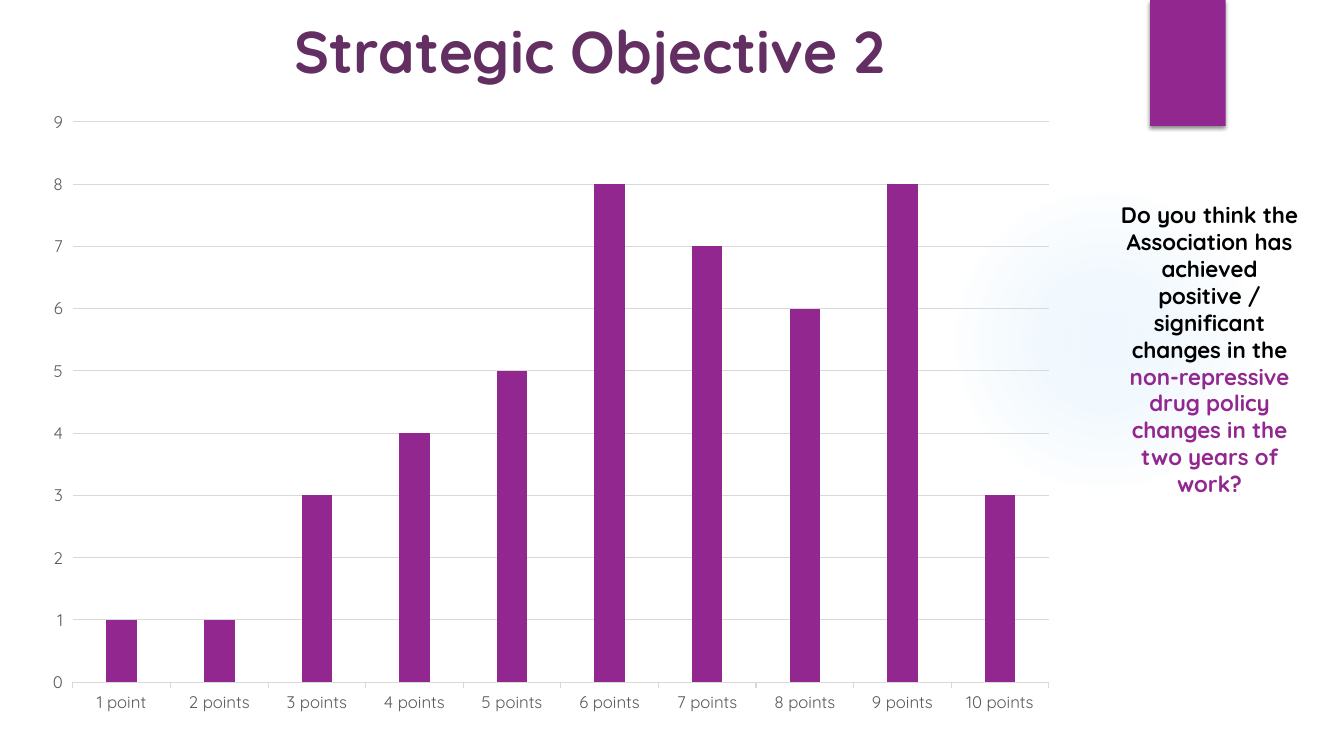
from lxml import etree
from pptx import Presentation
from pptx.chart.data import CategoryChartData as ChartData
from pptx.dml.color import RGBColor
from pptx.enum.chart import XL_CHART_TYPE as Kind, XL_TICK_MARK as Tick
from pptx.enum.shapes import MSO_SHAPE as Shape
from pptx.enum.text import MSO_ANCHOR as Anchor, MSO_AUTO_SIZE as Fit, PP_ALIGN as Align
from pptx.oxml import parse_xml
from pptx.util import Pt

FACE = "Quicksand"
PURPLE, PLUM, GREY, PALE = "92278F", "632E62", "595959", "D9D9D9"
NS = 'xmlns:a="http://schemas.openxmlformats.org/drawingml/2006/main"'


def paint(target, color):
    if hasattr(target, "solid"):
        target.solid()
        target = target.fore_color
    target.rgb = RGBColor.from_string(color)


def style(font, size, color, bold=False):
    font.name, font.size, font.bold = FACE, Pt(size), bold
    paint(font.color, color)


deck = Presentation()
deck.slide_width, deck.slide_height = Pt(960), Pt(540)
slide = deck.slides.add_slide(deck.slide_layouts[5])
shapes = slide.shapes

# Soft blue glow
glow = shapes.add_shape(Shape.OVAL, Pt(677.5), Pt(131.8), Pt(221.8), Pt(221.8))
glow.shadow.inherit = False
glow.line.fill.background()
glow.fill.background()
stops = "".join(
    f'<a:gs pos="{pos * 1000}"><a:srgbClr val="45A5ED">'
    f'<a:alpha val="{alpha * 1000}"/></a:srgbClr></a:gs>'
    for pos, alpha in [(0, 7), (36, 6), (69, 0)])
blend = parse_xml(
    f'<a:gradFill {NS} rotWithShape="1"><a:gsLst>{stops}</a:gsLst><a:path path="circle">'
    '<a:fillToRect l="50000" t="50000" r="50000" b="50000"/></a:path></a:gradFill>')
props = glow._element.spPr
props.replace(props.find("{*}noFill"), blend)

# Purple tab with its shadow
tab = shapes.add_shape(Shape.RECTANGLE, Pt(821.5), 0, Pt(54), Pt(90))
paint(tab.fill, PURPLE)
tab.line.fill.background()
tab.shadow.inherit = False
tab._element.spPr.find("{*}effectLst").append(parse_xml(
    f'<a:outerShdw {NS} blurRad="{Pt(3)}" dist="{Pt(2)}" dir="5400000" rotWithShape="0">'
    '<a:srgbClr val="000000"><a:alpha val="45000"/></a:srgbClr></a:outerShdw>'))

# Title
title = shapes.title
title.left, title.top, title.width, title.height = Pt(51), Pt(8.6), Pt(741), Pt(54.7)
frame = title.text_frame
frame.text = "Strategic Objective 2"
frame.auto_size = Fit.NONE
frame.vertical_anchor = Anchor.MIDDLE
frame.paragraphs[0].alignment = Align.CENTER
style(frame.paragraphs[0].font, 42, PLUM, True)

# Column chart of the scores
data = ChartData()
data.categories = ["1 point"] + [f"{n} points" for n in range(2, 11)]
data.add_series("Series 1", [1, 1, 3, 4, 5, 8, 7, 6, 8, 3])
chart = shapes.add_chart(Kind.COLUMN_CLUSTERED, Pt(23), Pt(70.6), Pt(741), Pt(447.8), data).chart
chart.has_legend = chart.has_title = False
style(chart.font, 10, "000000")
plot = chart.plots[0]
plot.gap_width, plot.overlap, plot.vary_by_categories = 219, -27, False
paint(plot.series[0].format.fill, PURPLE)

cats, vals = chart.category_axis, chart.value_axis
for axis in (cats, vals):
    style(axis.tick_labels.font, 12, GREY)
    axis.major_tick_mark, axis.minor_tick_mark = Tick.OUTSIDE, Tick.NONE
vals.minimum_scale, vals.maximum_scale, vals.major_unit = 0, 9, 1
vals.format.line.fill.background()
for line in (cats.format.line, vals.major_gridlines.format.line):
    line.width = Pt(0.75)
    paint(line.fill, PALE)

# Question beside the chart
box = shapes.add_textbox(Pt(791.3), Pt(140.4), Pt(145.4), Pt(220.3))
frame = box.text_frame
frame.word_wrap = True
frame.auto_size = Fit.SHAPE_TO_FIT_TEXT
para = frame.paragraphs[0]
para.alignment = Align.CENTER
for text, color in [
    ("Do you think the Association has achieved positive / significant changes in the ", "000000"),
    ("non-repressive drug policy changes in the two years of work?", PURPLE),
]:
    run = para.add_run()
    run.text = text
    style(run.font, 16, color, True)

deck.save("out.pptx")
